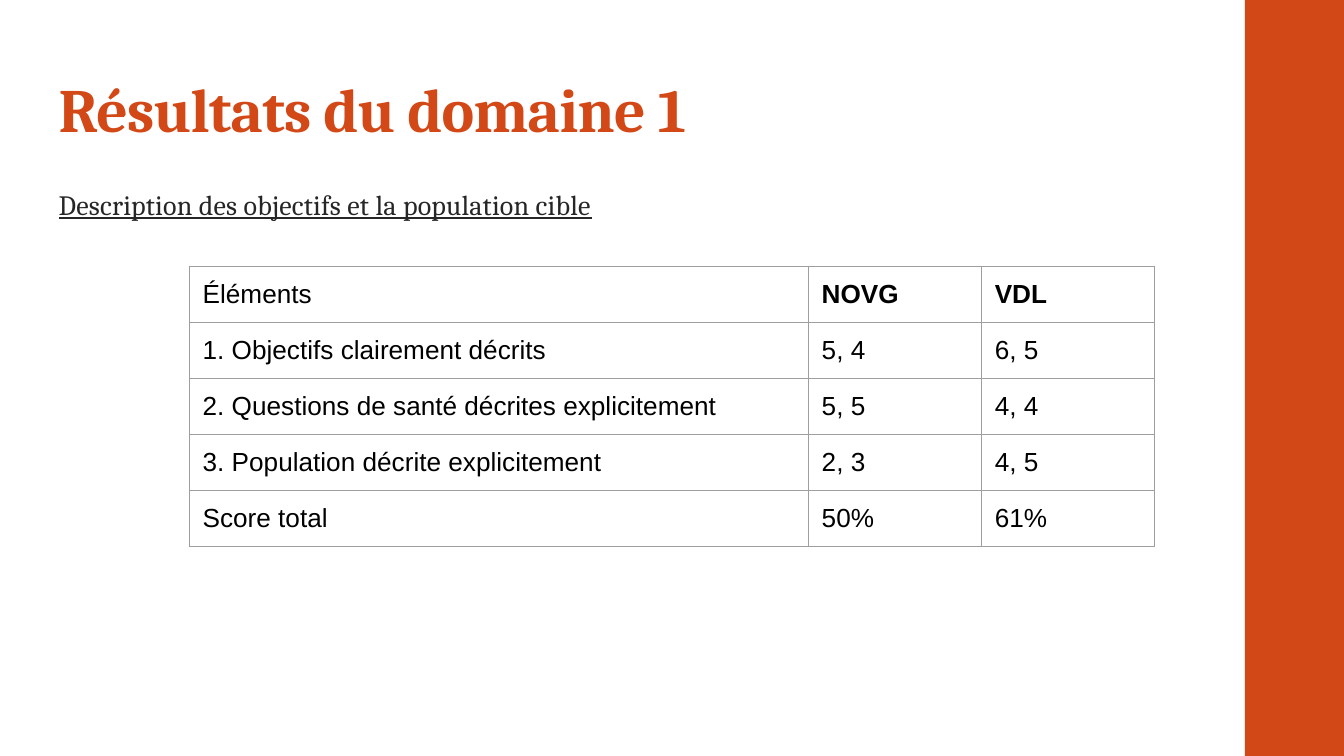
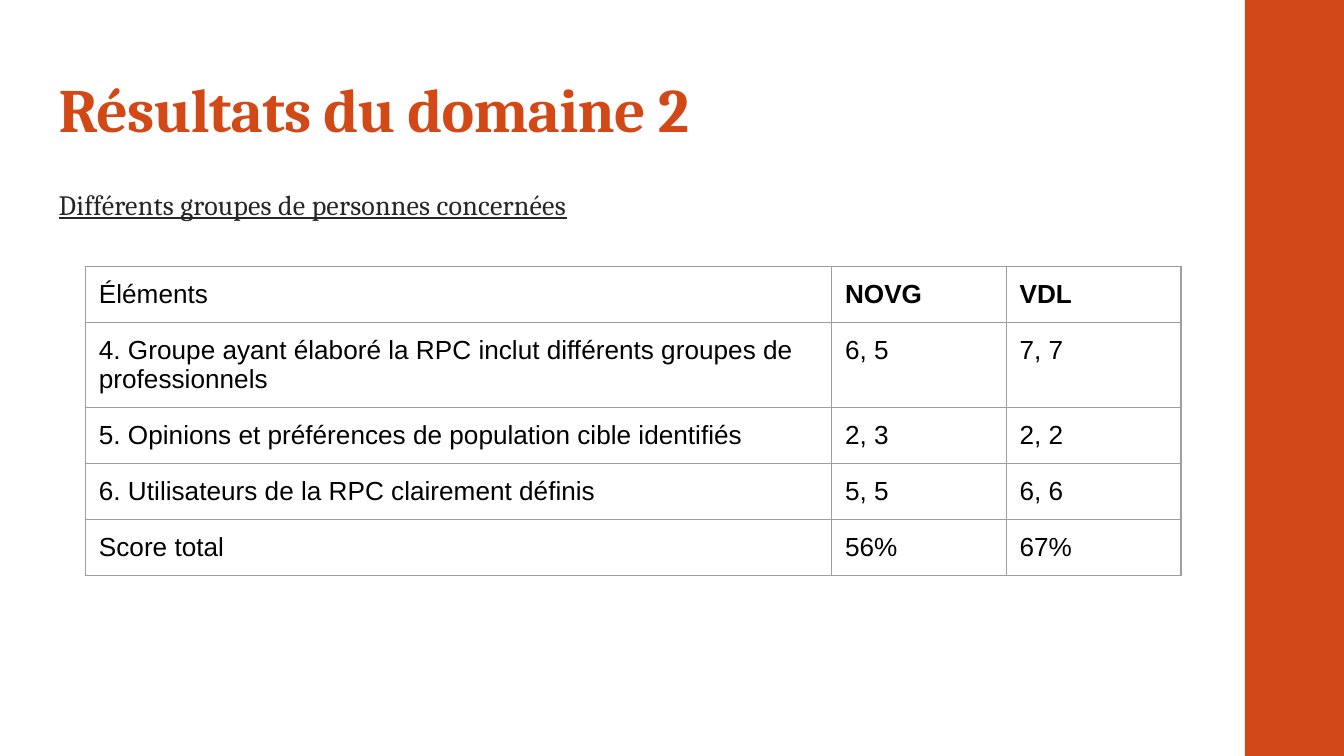
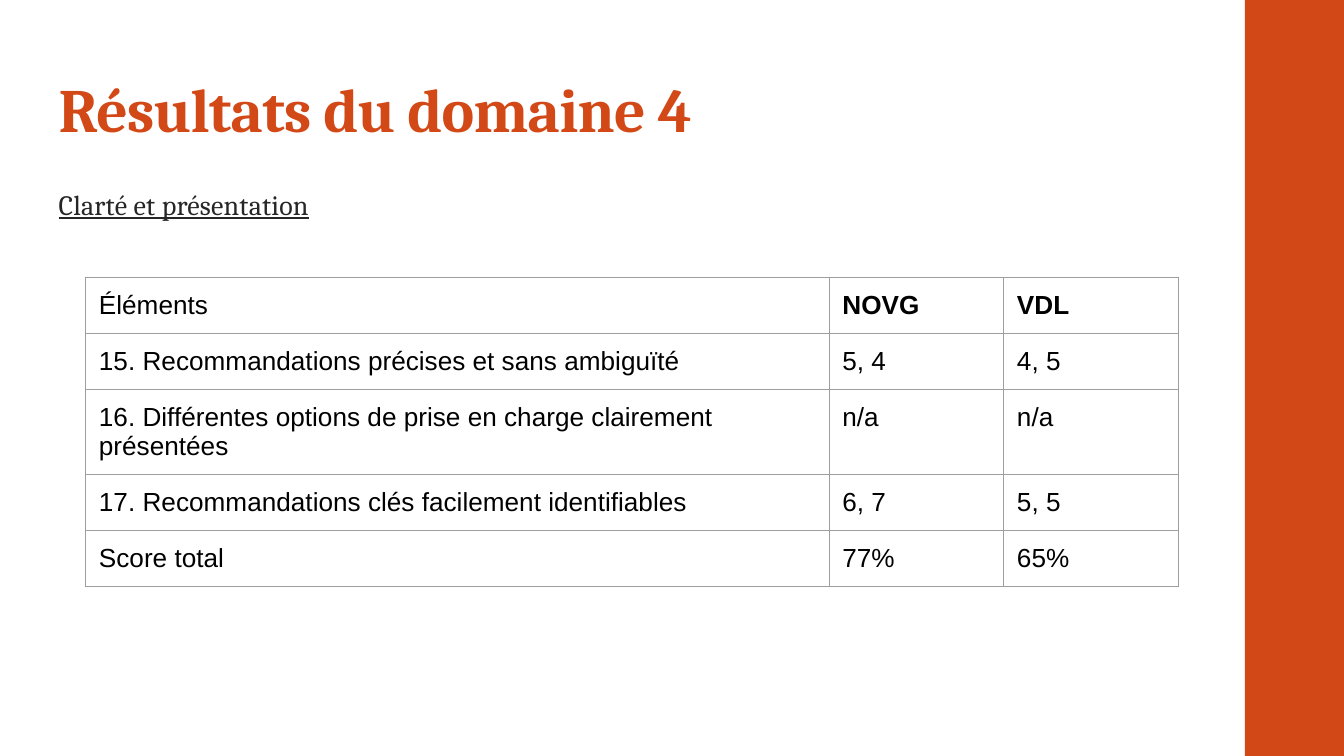
from lxml.etree import SubElement
from pptx import Presentation
from pptx.dml.color import RGBColor
from pptx.enum.shapes import MSO_SHAPE
from pptx.enum.text import MSO_ANCHOR, MSO_AUTO_SIZE, PP_ALIGN
from pptx.oxml.ns import qn
from pptx.util import Cm, Pt

# Content
HEADER = ("Éléments", "NOVG", "VDL")
DOMAINS = [
    {
        "title": "Résultats du domaine 1",
        "subtitle": "Description des objectifs et la population cible",
        "table": {"left": 3.58, "top": 5.03, "columns": (11.7, 3.27, 3.27)},
        "rows": [
            ("1. Objectifs clairement décrits", "5, 4", "6, 5"),
            ("2. Questions de santé décrites explicitement", "5, 5", "4, 4"),
            ("3. Population décrite explicitement", "2, 3", "4, 5"),
            ("Score total", "50%", "61%"),
        ],
    },
    {
        "title": "Résultats du domaine 2",
        "subtitle": "Différents groupes de personnes concernées",
        "table": {"left": 1.62, "top": 5.03, "columns": (14.1, 3.3, 3.3)},
        "rows": [
            ("4. Groupe ayant élaboré la RPC inclut différents groupes de professionnels",
             "6, 5", "7, 7"),
            ("5. Opinions et préférences de population cible identifiés", "2, 3", "2, 2"),
            ("6. Utilisateurs de la RPC clairement définis", "5, 5", "6, 6"),
            ("Score total", "56%", "67%"),
        ],
    },
    {
        "title": "Résultats du domaine 4",
        "subtitle": "Clarté et présentation",
        "table": {"left": 1.62, "top": 5.24, "columns": (14.05, 3.3, 3.3)},
        "rows": [
            ("15. Recommandations précises et sans ambiguïté", "5, 4", "4, 5"),
            ("16. Différentes options de prise en charge clairement présentées",
             "n/a", "n/a"),
            ("17. Recommandations clés facilement identifiables", "6, 7", "5, 5"),
            ("Score total", "77%", "65%"),
        ],
    },
]

# Shared style
ORANGE, DARK, BLACK, GREY = "D34817", "262626", "000000", "9E9E9E"
HEADING_FONT, TABLE_FONT = "Cambria", "Arial"
INSET = Cm(0.25)
TEXT_LEFT = Cm(0.86)
BAND_LEFT, BAND_WIDTH = Cm(23.53), Cm(1.9)
ROW_HEIGHT = Cm(1.06)


def color(value):
    return RGBColor.from_string(value)


def write(frame, text, *, size, font, fill, bold=False, underline=False,
          tracking=None, line_spacing=None, space_after=None, hanging=None):
    """Fill a text frame with one formatted paragraph."""
    frame.word_wrap = True
    paragraph = frame.paragraphs[0]
    paragraph.alignment = PP_ALIGN.LEFT
    if line_spacing:
        paragraph.line_spacing = line_spacing
    if space_after:
        paragraph.space_after = Pt(space_after)
    if hanging:
        properties = paragraph._p.get_or_add_pPr()
        properties.set("marL", str(hanging))
        properties.set("indent", str(-hanging))
    run = paragraph.add_run()
    run.text = text
    run.font.size = Pt(size)
    run.font.name = font
    run.font.color.rgb = color(fill)
    run.font.bold = bold
    run.font.underline = underline
    if tracking:
        run._r.get_or_add_rPr().set("spc", str(round(tracking * 100)))


def set_insets(target):
    target.margin_left = target.margin_right = INSET
    target.margin_top = target.margin_bottom = INSET


def add_band(slide, height):
    band = slide.shapes.add_shape(MSO_SHAPE.RECTANGLE, BAND_LEFT, 0, BAND_WIDTH, height)
    band.shadow.inherit = False
    band.fill.solid()
    band.fill.fore_color.rgb = color(ORANGE)
    band.line.fill.background()
    # Send the band behind the title
    slide.shapes._spTree.insert(2, band._element)


def add_headings(slide, title_text, subtitle_text):
    title = slide.shapes.title
    title.left, title.top, title.width, title.height = TEXT_LEFT, Cm(1.24), Cm(23.67), Cm(1.6)
    subtitle = slide.shapes.add_textbox(TEXT_LEFT, Cm(3.2), Cm(22.43), Cm(9.5))
    for shape in (title, subtitle):
        set_insets(shape.text_frame)
        shape.text_frame.vertical_anchor = MSO_ANCHOR.TOP
        shape.text_frame.auto_size = MSO_AUTO_SIZE.NONE
    write(title.text_frame, title_text, size=33, font=HEADING_FONT, fill=ORANGE,
          bold=True, tracking=-0.4, line_spacing=0.9)
    write(subtitle.text_frame, subtitle_text, size=15, font=HEADING_FONT, fill=DARK,
          underline=True, tracking=0.1, line_spacing=1.14, space_after=1.5,
          hanging=Cm(0.38))


def set_borders(cell):
    properties = cell._tc.get_or_add_tcPr()
    for position, side in enumerate(("lnL", "lnR", "lnT", "lnB")):
        line = SubElement(properties, qn(f"a:{side}"), w=str(Pt(0.75)))
        fill = SubElement(line, qn("a:solidFill"))
        SubElement(fill, qn("a:srgbClr"), val=GREY)
        # Borders come before the cell fill
        properties.insert(position, line)


def add_score_table(slide, rows, left, top, columns):
    widths = [Cm(width) for width in columns]
    table = slide.shapes.add_table(len(rows), len(widths), Cm(left), Cm(top),
                                   sum(widths), ROW_HEIGHT * len(rows)).table
    table.first_row = table.horz_banding = False
    for column, width in zip(table.columns, widths):
        column.width = width
    for row_index, row in enumerate(rows):
        table.rows[row_index].height = ROW_HEIGHT
        for column_index, text in enumerate(row):
            cell = table.cell(row_index, column_index)
            set_insets(cell)
            cell.fill.background()
            set_borders(cell)
            write(cell.text_frame, text, size=14, font=TABLE_FONT, fill=BLACK,
                  bold=row_index == 0 and column_index > 0)


def main():
    presentation = Presentation()
    presentation.slide_width, presentation.slide_height = Cm(25.4), Cm(14.29)
    title_only = presentation.slide_layouts[5]
    for domain in DOMAINS:
        slide = presentation.slides.add_slide(title_only)
        add_band(slide, presentation.slide_height)
        add_headings(slide, domain["title"], domain["subtitle"])
        add_score_table(slide, [HEADER, *domain["rows"]], **domain["table"])
    presentation.save("out.pptx")


if __name__ == "__main__":
    main()
